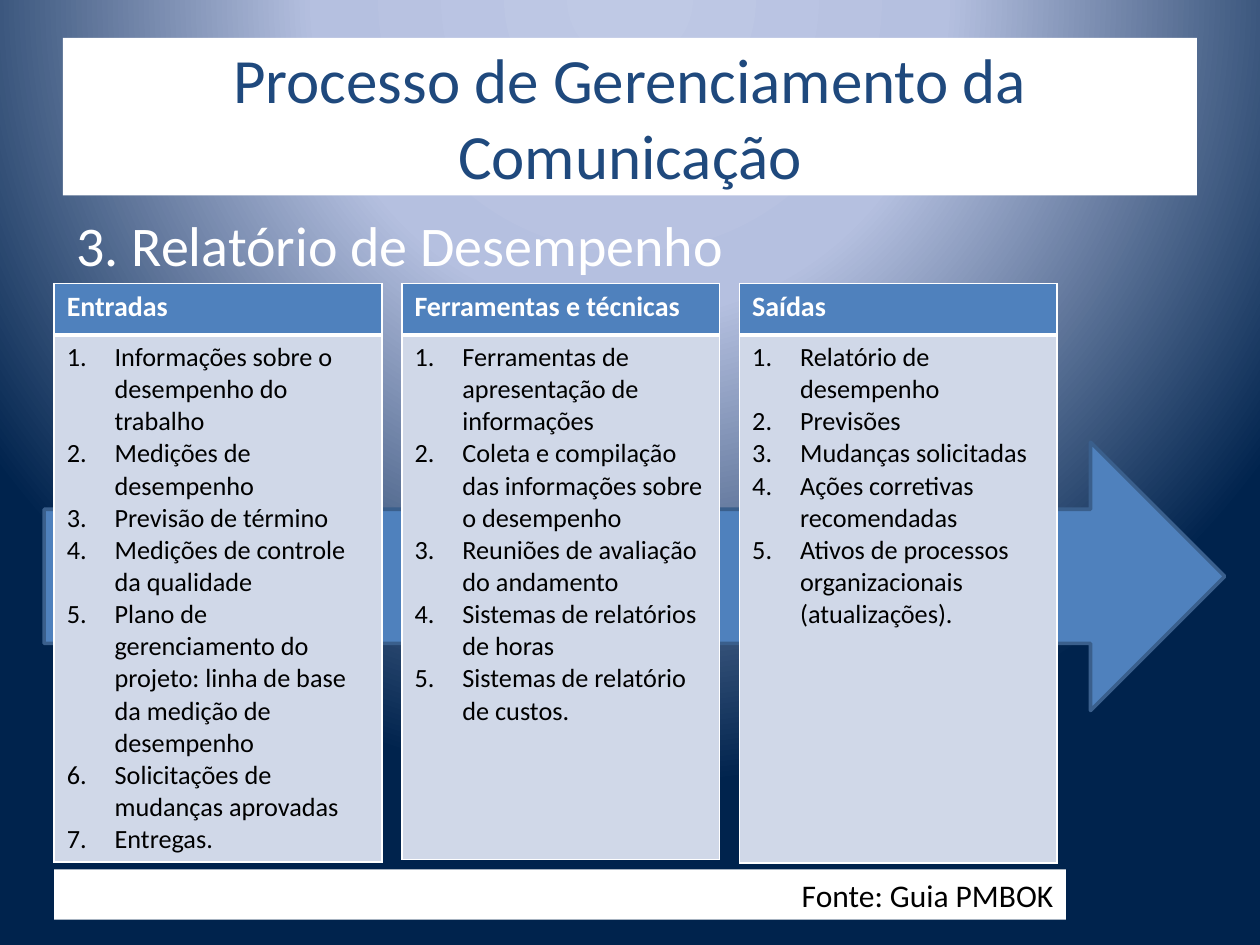
from lxml import etree
from pptx import Presentation
from pptx.dml.color import RGBColor
from pptx.enum.shapes import MSO_SHAPE
from pptx.enum.text import MSO_ANCHOR, PP_ALIGN
from pptx.oxml import parse_xml
from pptx.oxml.ns import nsdecls, qn
from pptx.util import Inches, Pt

LEFT, CENTER, RIGHT = PP_ALIGN.LEFT, PP_ALIGN.CENTER, PP_ALIGN.RIGHT
TOP, MIDDLE = MSO_ANCHOR.TOP, MSO_ANCHOR.MIDDLE
RECTANGLE, RIGHT_ARROW = MSO_SHAPE.RECTANGLE, MSO_SHAPE.RIGHT_ARROW

FONT = "Calibri"
WHITE, BLACK, NAVY = "FFFFFF", "000000", "1F497D"
BLUE, BLUE_EDGE, PALE = "4F81BD", "3A5F8C", "D0D8E8"
BACKGROUND_STOPS = [(0, "BFC9E5"), (40, "B5C0E0"), (100, "00234D")]

TITLE = "Processo de Gerenciamento da Comunicação"
SUBTITLE = "3. Relatório de Desempenho"
SOURCE = "Fonte: Guia PMBOK"

TABLE_LEFT, TABLE_TOP, TABLE_GAP, HEADER_HEIGHT = 0.43, 2.25, 0.16, 0.41
NUMBER_INDENT = 0.38
# heading, width, height, items
TABLES = [
    ("Entradas", 2.6, 4.59, [
        "Informações sobre o desempenho do trabalho",
        "Medições de desempenho",
        "Previsão de término",
        "Medições de controle da qualidade",
        "Plano de gerenciamento do projeto: linha de base da medição de desempenho",
        "Solicitações de mudanças aprovadas",
        "Entregas.",
    ]),
    ("Ferramentas e técnicas", 2.52, 4.57, [
        "Ferramentas de apresentação de informações",
        "Coleta e compilação das informações sobre o desempenho",
        "Reuniões de avaliação do andamento",
        "Sistemas de relatórios de horas",
        "Sistemas de relatório de custos.",
    ]),
    ("Saídas", 2.52, 4.6, [
        "Relatório de desempenho",
        "Previsões",
        "Mudanças solicitadas",
        "Ações corretivas recomendadas",
        "Ativos de processos organizacionais (atualizações).",
    ]),
]


def rgb(color):
    return RGBColor.from_string(color)


def write_text(frame, lines, *, size, color, bold=False, align=LEFT, anchor=TOP,
               numbered=False):
    frame.word_wrap = True
    frame.vertical_anchor = anchor
    for index, line in enumerate(lines):
        paragraph = frame.paragraphs[0] if index == 0 else frame.add_paragraph()
        paragraph.alignment = align
        if numbered:
            properties = paragraph._p.get_or_add_pPr()
            properties.set("marL", str(Inches(NUMBER_INDENT)))
            properties.set("indent", str(-Inches(NUMBER_INDENT)))
            etree.SubElement(properties, qn("a:buFont"), typeface="+mj-lt")
            etree.SubElement(properties, qn("a:buAutoNum"), type="arabicPeriod")
        run = paragraph.add_run()
        run.text = line
        run.font.name = FONT
        run.font.size = Pt(size)
        run.font.bold = bold
        run.font.color.rgb = rgb(color)


def add_filled_shape(slide, kind, box, fill, line=None):
    shape = slide.shapes.add_shape(kind, *map(Inches, box))
    shape.shadow.inherit = False
    shape.fill.solid()
    shape.fill.fore_color.rgb = rgb(fill)
    if line:
        shape.line.color.rgb = rgb(line)
        shape.line.width = Pt(2)
    else:
        shape.line.fill.background()
    return shape


def paint_background(slide):
    """Radial gradient centred above the top edge of the slide."""
    slide.background.fill.solid()
    solid = slide.element.find(".//" + qn("p:bgPr")).find(qn("a:solidFill"))
    stops = "".join(
        f'<a:gs pos="{position * 1000}"><a:srgbClr val="{color}"/></a:gs>'
        for position, color in BACKGROUND_STOPS)
    gradient = parse_xml(
        f'<a:gradFill {nsdecls("a")} rotWithShape="1"><a:gsLst>{stops}</a:gsLst>'
        '<a:path path="circle"><a:fillToRect l="50000" t="-80000" r="50000" '
        'b="180000"/></a:path></a:gradFill>')
    solid.getparent().replace(solid, gradient)


def style_cell(cell, fill, borders):
    """Borders are widths in points for the left, right, top and bottom edges."""
    properties = cell._tc.get_or_add_tcPr()
    for edge, width in zip("LRTB", borders):
        properties.append(parse_xml(
            f'<a:ln{edge} {nsdecls("a")} w="{Pt(width)}"><a:solidFill>'
            f'<a:srgbClr val="{WHITE}"/></a:solidFill></a:ln{edge}>'))
    cell.fill.solid()
    cell.fill.fore_color.rgb = rgb(fill)


def add_list_table(slide, left, heading, width, height, items):
    box = map(Inches, (left, TABLE_TOP, width, height))
    table = slide.shapes.add_table(2, 1, *box).table
    table.horz_banding = False
    table.rows[0].height = Inches(HEADER_HEIGHT)
    table.rows[1].height = Inches(height - HEADER_HEIGHT)
    header, body = table.cell(0, 0), table.cell(1, 0)
    style_cell(header, BLUE, (1, 1, 1, 3))
    style_cell(body, PALE, (1, 1, 3, 1))
    write_text(header.text_frame, [heading], size=16, color=WHITE, bold=True)
    write_text(body.text_frame, items, size=15, color=BLACK, numbered=True)


def main():
    presentation = Presentation()
    presentation.slide_width, presentation.slide_height = Inches(10), Inches(7.5)
    slide = presentation.slides.add_slide(presentation.slide_layouts[6])
    paint_background(slide)

    title = add_filled_shape(slide, RECTANGLE, (0.5, 0.3, 9, 1.25), WHITE)
    write_text(title.text_frame, [TITLE], size=36, color=NAVY, align=CENTER,
               anchor=MIDDLE)
    subtitle = slide.shapes.add_textbox(*map(Inches, (0.51, 1.62, 9, 0.66)))
    write_text(subtitle.text_frame, [SUBTITLE], size=32, color=WHITE)

    add_filled_shape(slide, RIGHT_ARROW, (0.35, 3.51, 9.37, 2.13), BLUE, BLUE_EDGE)
    left = TABLE_LEFT
    for heading, width, height, items in TABLES:
        add_list_table(slide, left, heading, width, height, items)
        left += width + TABLE_GAP

    source = add_filled_shape(slide, RECTANGLE, (0.43, 6.9, 8.03, 0.4), WHITE)
    write_text(source.text_frame, [SOURCE], size=18, color=BLACK, align=RIGHT)

    presentation.save("out.pptx")


if __name__ == "__main__":
    main()
